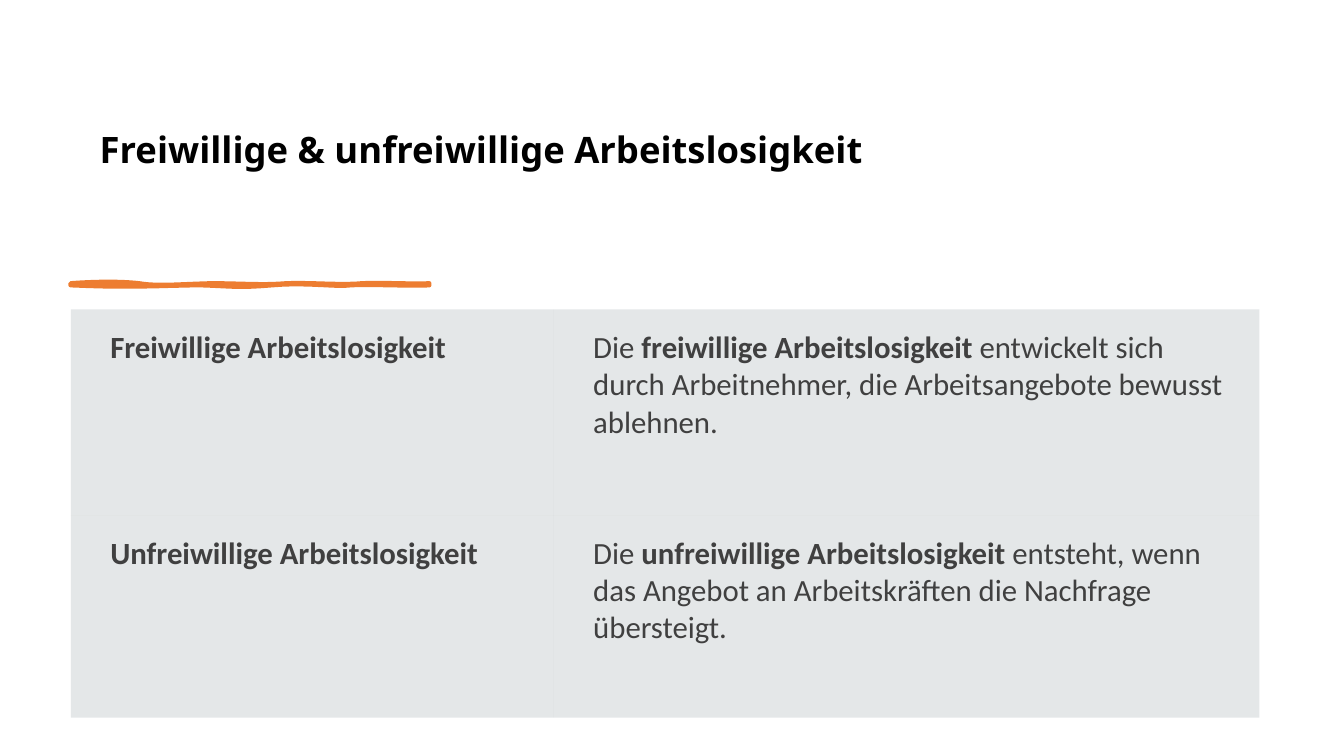
from dataclasses import dataclass

from lxml import etree
from pptx import Presentation
from pptx.dml.color import RGBColor
from pptx.enum import text as t
from pptx.oxml import ns
from pptx.util import Pt

ORANGE, GREY, INK, BLACK = "ED7D31", "B4BCBE", "404040", "000000"
PLAIN_TABLE = "{2D5ABB26-0587-4C30-8999-92F81FD0307C}"


@dataclass
class Part:
    text: str
    bold: bool = False


@dataclass
class Entry:
    term: list[Part]
    meaning: list[Part]


@dataclass
class Curve:
    """A cubic curve: two handles and an end, in points."""
    first: tuple[float, float]
    second: tuple[float, float]
    end: tuple[float, float]


ENTRIES = [
    Entry([Part("Freiwillige Arbeitslosigkeit", True)],
          [Part("Die "), Part("freiwillige Arbeitslosigkeit", True),
           Part(" entwickelt sich durch Arbeitnehmer, die Arbeitsangebote bewusst ablehnen.")]),
    Entry([Part("Unfreiwillige Arbeitslosigkeit", True)],
          [Part("Die "), Part("unfreiwillige Arbeitslosigkeit", True),
           Part(" entsteht, wenn das Angebot an Arbeitskräften die Nachfrage übersteigt.")]),
]

START = (50.4, 202.3)
STROKE = [
    Curve((69.8, 200.9), (87.1, 200.9), (99.4, 202.3)),
    Curve((111.6, 204.5), (127.4, 203), (150.5, 202.3)),
    Curve((173.5, 202.3), (187.2, 203.8), (204.5, 202.3)),
    Curve((221.8, 201.6), (244.1, 203.8), (258.5, 202.3)),
    Curve((272.9, 201.6), (296.6, 203), (306.7, 202.3)),
    Curve((306.7, 203), (306.7, 203.8), (306.7, 203.8)),
    Curve((293.8, 204.5), (262.1, 203), (250.6, 203.8)),
    Curve((239, 205.2), (218.9, 201.6), (194.4, 203.8)),
    Curve((169.2, 205.9), (166.3, 204.5), (143.3, 203.8)),
    Curve((119.5, 203.8), (95, 205.9), (50.4, 203.8)),
]


def color(code: str) -> RGBColor:
    return RGBColor.from_string(code)


def add_run(para, part: Part, font: str, size: float, code: str) -> None:
    run = para.add_run()
    run.text = part.text
    run.font.name = font
    run.font.size = Pt(size)
    run.font.bold = part.bold
    run.font.color.rgb = color(code)


def add_title(slide) -> None:
    title = slide.shapes.title
    title.left, title.top, title.width, title.height = Pt(64), Pt(19.5), Pt(722), Pt(135.5)
    frame = title.text_frame
    frame.auto_size = t.MSO_AUTO_SIZE.NONE
    frame.vertical_anchor = t.MSO_ANCHOR.BOTTOM
    frame.margin_bottom = Pt(32.5)
    para = frame.paragraphs[0]
    para.alignment = t.PP_ALIGN.LEFT
    para.line_spacing = 0.9
    add_run(para, Part("Freiwillige & unfreiwillige Arbeitslosigkeit", True),
            "Noto Sans", 26, BLACK)


def trace(start: tuple[float, float], curves: list[Curve], steps: int = 10) -> list:
    """Turn the curves into short straight steps."""
    dots = []
    for curve in curves:
        for step in range(1, steps + 1):
            u = step / steps
            mix = ((1 - u) ** 3, 3 * u * (1 - u) ** 2, 3 * u * u * (1 - u), u ** 3)
            knots = (start, curve.first, curve.second, curve.end)
            dots.append(tuple(Pt(sum(m * k[axis] for m, k in zip(mix, knots)))
                              for axis in (0, 1)))
        start = curve.end
    return dots


def add_stroke(slide) -> None:
    pen = slide.shapes.build_freeform(Pt(START[0]), Pt(START[1]))
    pen.add_line_segments(trace(START, STROKE), close=True)
    stroke = pen.convert_to_shape()
    stroke.shadow.inherit = False
    stroke.fill.solid()
    stroke.fill.fore_color.rgb = color(ORANGE)
    stroke.line.color.rgb = color(ORANGE)
    stroke.line.width = Pt(3)
    etree.SubElement(stroke.line.fill._xPr, ns.qn("a:round"))


def fill_cell(cell, parts: list[Part]) -> None:
    cell.margin_left = Pt(28.2)
    cell.margin_top = cell.margin_right = cell.margin_bottom = Pt(14.1)
    cell.fill.solid()
    cell.fill.fore_color.rgb = color(GREY)
    tint = cell._tc.tcPr.find(".//" + ns.qn("a:srgbClr"))
    etree.SubElement(tint, ns.qn("a:alpha"), val="35000")
    for part in parts:
        add_run(cell.text_frame.paragraphs[0], part, "Calibri", 22, INK)


def add_terms(slide) -> None:
    frame = slide.shapes.add_table(len(ENTRIES), 2, Pt(50.6), Pt(221), Pt(849), Pt(291.6))
    table = frame.table
    table.first_row = table.horz_banding = False
    table._tbl.tblPr.find(ns.qn("a:tableStyleId")).text = PLAIN_TABLE
    for col, width in zip(table.columns, (345, 504)):
        col.width = Pt(width)
    for row, height, entry in zip(table.rows, (146.9, 144.7), ENTRIES):
        row.height = Pt(height)
        for cell, parts in zip(row.cells, (entry.term, entry.meaning)):
            fill_cell(cell, parts)


def main() -> None:
    deck = Presentation()
    deck.slide_width, deck.slide_height = Pt(960), Pt(540)
    slide = deck.slides.add_slide(deck.slide_layouts[5])
    add_title(slide)
    add_stroke(slide)
    add_terms(slide)
    deck.save("out.pptx")


if __name__ == "__main__":
    main()
